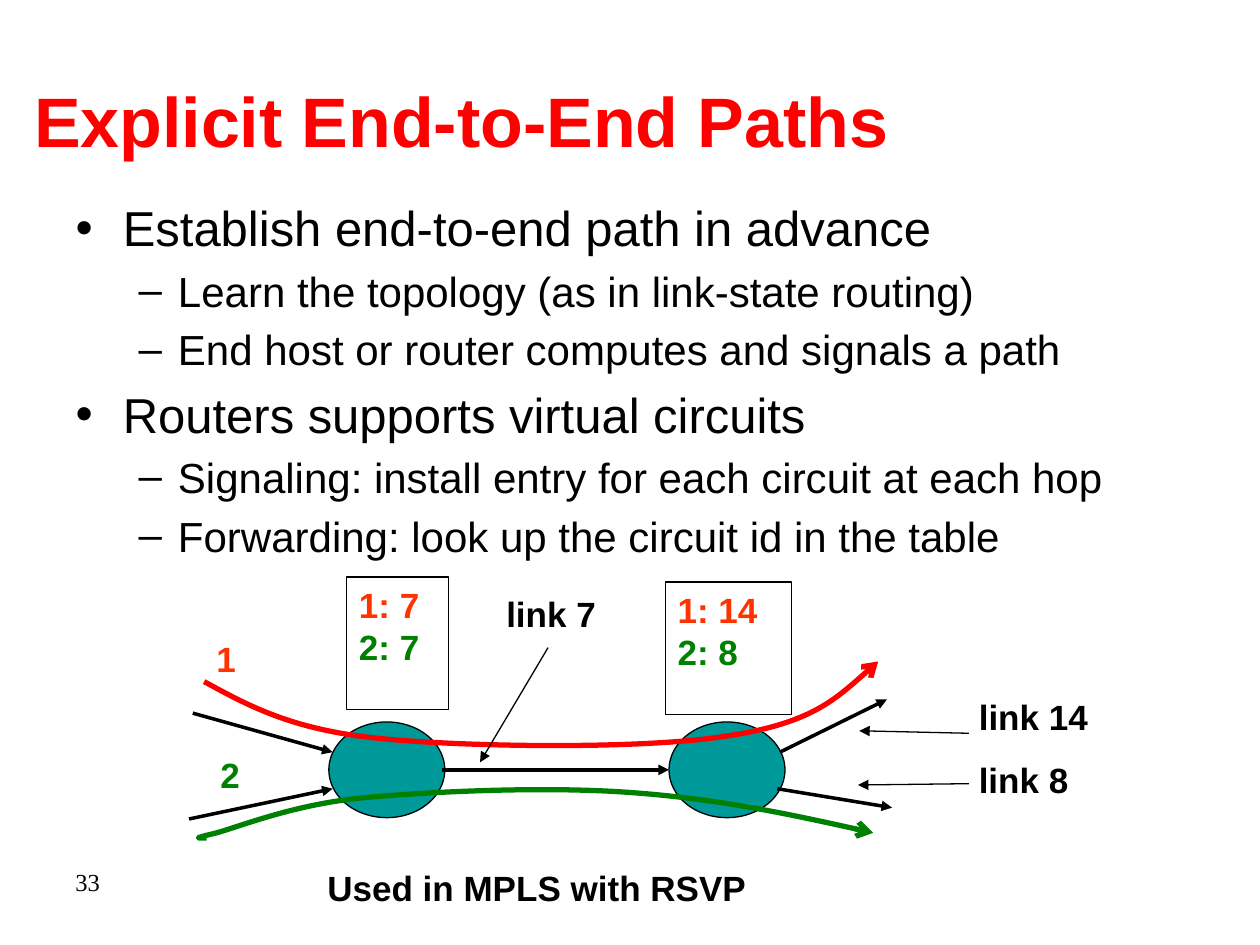
from dataclasses import dataclass

from lxml.etree import SubElement
from pptx import Presentation
from pptx.dml.color import RGBColor
from pptx.enum.shapes import MSO_CONNECTOR, MSO_SHAPE
from pptx.enum.text import MSO_ANCHOR, MSO_AUTO_SIZE, PP_ALIGN
from pptx.oxml.ns import qn
from pptx.util import Inches, Pt


@dataclass(frozen=True)
class Theme:
    font: str = "Arial"
    number_font: str = "Times New Roman"
    black: str = "000000"
    white: str = "FFFFFF"
    red: str = "FF0000"
    orange: str = "FF3300"
    green: str = "008000"
    teal: str = "009999"
    title_size: int = 40
    body_sizes: tuple = (28, 24)
    label_size: int = 20
    number_size: int = 14
    thin: float = 0.75
    link: float = 2
    circuit: float = 3


THEME = Theme()

TITLE = "Explicit End-to-End Paths"
BULLETS = [
    (0, "Establish end-to-end path in advance"),
    (1, "Learn the topology (as in link-state routing)"),
    (1, "End host or router computes and signals a path"),
    (0, "Routers supports virtual circuits"),
    (1, "Signaling: install entry for each circuit at each hop"),
    (1, "Forwarding: look up the circuit id in the table"),
]
ROUTER_LEFTS = (2.61, 5.31)
ROUTER_TOP, ROUTER_SIZE = 5.73, (0.92, 0.76)
LINKS = [
    ((1.5, 6.5), (2.64, 6.26)),
    ((3.51, 6.11), (5.31, 6.11)),
    ((6.19, 5.97), (7.04, 5.55)),
    ((6.17, 6.26), (7.08, 6.41)),
    ((1.53, 5.66), (2.64, 5.97)),
]
POINTERS = [
    ((4.35, 5.14), (3.81, 6.05)),
    ((7.69, 5.82), (6.82, 5.8)),
    ((7.69, 6.22), (6.81, 6.23)),
]
# Each circuit: a start point, then three points for every Bezier segment
CIRCUITS = [
    (THEME.red, [(1.62, 5.41), (1.97, 5.6), (2.31, 5.79), (3, 5.86),
                 (3.69, 5.93), (5.12, 5.95), (5.78, 5.84),
                 (6.44, 5.74), (6.7, 5.49), (6.97, 5.25)]),
    (THEME.green, [(1.64, 6.65), (1.57, 6.65), (1.51, 6.66), (1.72, 6.61),
                   (1.93, 6.55), (2.35, 6.38), (2.9, 6.33),
                   (3.45, 6.28), (4.34, 6.24), (5.01, 6.29),
                   (5.69, 6.34), (6.31, 6.47), (6.93, 6.61)]),
]
TABLES = [
    ((2.75, 4.58, 0.81, 1.05), ("1: 7", "2: 7")),
    ((5.28, 4.62, 1, 1.05), ("1: 14", "2: 8")),
]
LABELS = [
    ("1", (1.62, 5.01, 0.4, 0.57), THEME.orange),
    ("2", (1.65, 5.93, 0.4, 0.57), THEME.green),
    ("link 7", (3.92, 4.65, 1.1, 0.57), THEME.black),
    ("link 14", (7.67, 5.47, 1.29, 0.57), THEME.black),
    ("link 8", (7.67, 5.97, 1.1, 0.57), THEME.black),
    ("Used in MPLS with RSVP", (2.5, 6.83, 3.6, 0.44), THEME.black),
]
SLIDE_NUMBER = ("33", (0.5, 6.83, 2.33, 0.52))


def inches(values):
    return [Inches(value) for value in values]


def place(shape, area):
    shape.left, shape.top, shape.width, shape.height = inches(area)


def add_run(para, text, size, color, bold=False, font=THEME.font):
    span = para.add_run()
    span.text = text
    span.font.name, span.font.size, span.font.bold = font, Pt(size), bold
    span.font.color.rgb = RGBColor.from_string(color)


def next_paragraph(frame, index):
    return frame.paragraphs[0] if index == 0 else frame.add_paragraph()


def set_line(shape, color, width, arrow=None):
    shape.line.color.rgb = RGBColor.from_string(color)
    shape.line.width = Pt(width)
    if arrow:
        SubElement(shape.line._get_or_add_ln(), qn("a:tailEnd"), type=arrow)


def add_title(slide):
    title = slide.shapes.title
    place(title, (0.17, 0.32, 9.58, 1.25))
    title.text_frame.vertical_anchor = MSO_ANCHOR.MIDDLE
    para = title.text_frame.paragraphs[0]
    para.alignment = PP_ALIGN.LEFT
    add_run(para, TITLE, THEME.title_size, THEME.red, bold=True)


def add_bullets(slide):
    body = slide.placeholders[1]
    place(body, (0.5, 1.52, 9, 3.06))
    body.text_frame.auto_size = MSO_AUTO_SIZE.NONE
    for index, (level, text) in enumerate(BULLETS):
        para = next_paragraph(body.text_frame, index)
        para.level = level
        add_run(para, text, THEME.body_sizes[level], THEME.black)


def add_label(slide, text, area, size, color, **style):
    box = slide.shapes.add_textbox(*inches(area))
    box.text_frame.word_wrap = True
    add_run(box.text_frame.paragraphs[0], text, size, color, **style)


def add_arrow(slide, start, end, width):
    arrow = slide.shapes.add_connector(MSO_CONNECTOR.STRAIGHT, *inches(start + end))
    set_line(arrow, THEME.black, width, "triangle")
    SubElement(arrow._element.spPr, qn("a:effectLst"))


def add_outlined(slide, kind, area, fill):
    shape = slide.shapes.add_shape(kind, *inches(area))
    shape.shadow.inherit = False
    shape.fill.solid()
    shape.fill.fore_color.rgb = RGBColor.from_string(fill)
    set_line(shape, THEME.black, THEME.thin)
    return shape


def add_circuit(slide, color, points):
    """Draw the control points as a polyline, then turn each three steps into a curve."""
    start, *rest = [tuple(inches(point)) for point in points]
    builder = slide.shapes.build_freeform(*start)
    builder.add_line_segments(rest, close=False)
    curve = builder.convert_to_shape()
    curve.shadow.inherit = False
    curve.fill.background()
    set_line(curve, color, THEME.circuit, "arrow")
    steps = list(curve._element.iter(qn("a:lnTo")))
    outline = steps[0].getparent()
    for first in range(0, len(steps), 3):
        bezier = SubElement(outline, qn("a:cubicBezTo"))
        for step in steps[first:first + 3]:
            bezier.append(step[0])
            outline.remove(step)


def add_forwarding_table(slide, area, entries):
    frame = add_outlined(slide, MSO_SHAPE.RECTANGLE, area, THEME.white).text_frame
    frame.vertical_anchor = MSO_ANCHOR.TOP
    for index, (entry, color) in enumerate(zip(entries, (THEME.orange, THEME.green))):
        para = next_paragraph(frame, index)
        para.alignment = PP_ALIGN.LEFT
        add_run(para, entry, THEME.label_size, color, bold=True)


def main():
    deck = Presentation()
    deck.slide_width, deck.slide_height = Inches(10), Inches(7.5)
    slide = deck.slides.add_slide(deck.slide_layouts[1])
    add_title(slide)
    add_bullets(slide)
    add_label(slide, *SLIDE_NUMBER, THEME.number_size, THEME.black,
              font=THEME.number_font)
    for left in ROUTER_LEFTS:
        add_outlined(slide, MSO_SHAPE.OVAL, (left, ROUTER_TOP, *ROUTER_SIZE), THEME.teal)
    for start, end in LINKS:
        add_arrow(slide, start, end, THEME.link)
    for color, points in CIRCUITS:
        add_circuit(slide, color, points)
    for area, entries in TABLES:
        add_forwarding_table(slide, area, entries)
    for start, end in POINTERS:
        add_arrow(slide, start, end, THEME.thin)
    for text, area, color in LABELS:
        add_label(slide, text, area, THEME.label_size, color, bold=True)
    deck.save("out.pptx")


if __name__ == "__main__":
    main()
